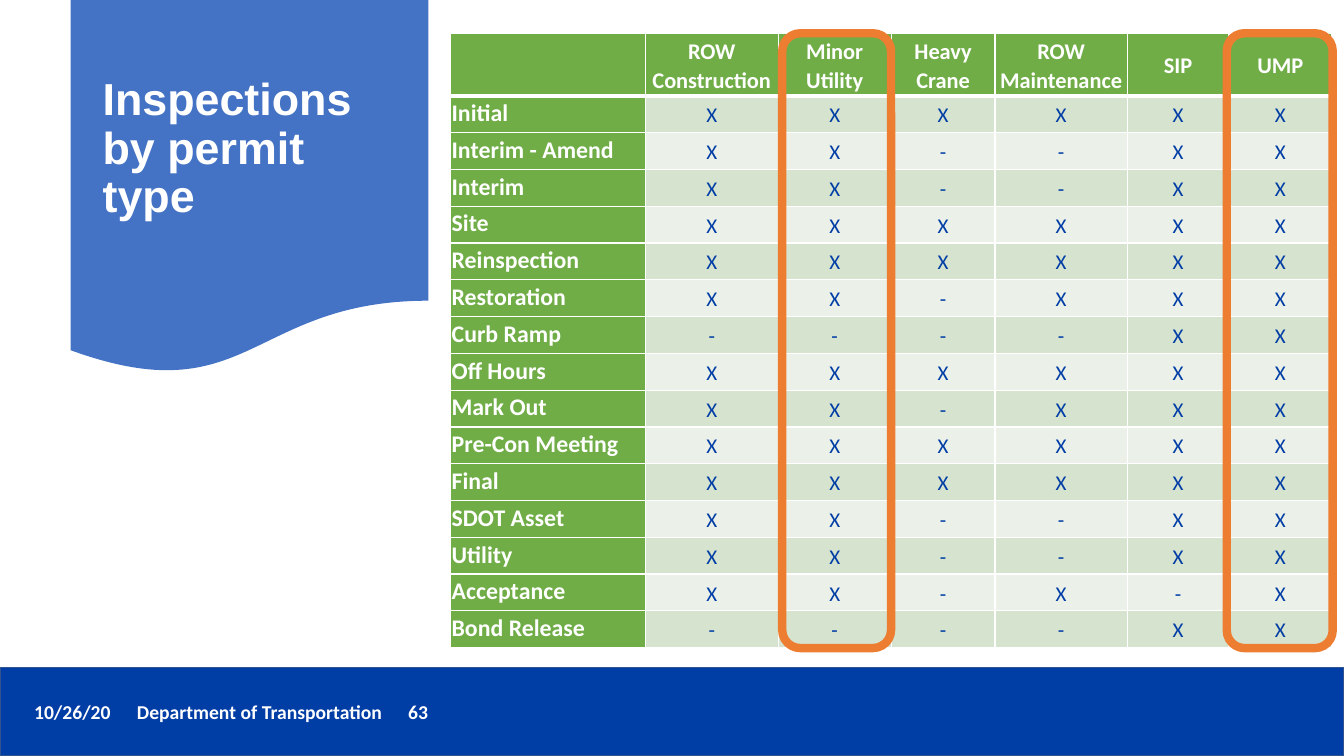
from dataclasses import dataclass

from pptx import Presentation
from pptx import util as u
from pptx.dml.color import RGBColor
from pptx.enum import shapes, text
from pptx.oxml import parse_xml
from pptx.oxml.ns import nsdecls

WHITE = RGBColor(0xFF, 0xFF, 0xFF)
NAVY = RGBColor(0x00, 0x3D, 0xA5)
EDGE = RGBColor(0x31, 0x53, 0x8F)
BLUE = RGBColor(0x44, 0x72, 0xC4)
GREEN = RGBColor(0x70, 0xAD, 0x47)
ORANGE = RGBColor(0xED, 0x7D, 0x31)
BANDS = (RGBColor(0xD5, 0xE3, 0xCF), RGBColor(0xEB, 0xF1, 0xE9))

WIDE, HIGH = u.Inches(13.33), u.Inches(7.5)


@dataclass
class Box:
    """A place on the slide, in percent of its width and height."""
    x: float
    y: float
    w: float
    h: float

    def rect(self) -> tuple[int, ...]:
        return across(self.x), down(self.y), across(self.w), down(self.h)


@dataclass
class Block:
    kind: shapes.MSO_SHAPE
    box: Box
    fill: RGBColor | None = None
    line: RGBColor | None = None
    width: float = 1


KIND = shapes.MSO_SHAPE
BLOCKS = [
    Block(KIND.RECTANGLE, Box(0, 88.27, 100, 11.73), NAVY, EDGE),
    Block(KIND.FLOWCHART_DOCUMENT, Box(5.25, 0, 26.63, 49.6), BLUE),
]
FRAMES = [
    Block(KIND.FLOWCHART_ALTERNATE_PROCESS, Box(x, 4.4, w, 81.33), None, ORANGE, 6)
    for x, w in ((58.2, 8.1), (91.28, 7.88))
]
GRID = Box(33.53, 4.4, 65.57, 81.33)
COLS = (14.48, 9.9, 8.4, 7.73, 9.83, 7.58, 7.65)
HEAD_ROW, BODY_ROW = 8.28, 4.87
HEADS = ("", "ROW Construction", "Minor Utility", "Heavy Crane",
         "ROW Maintenance", "SIP", "UMP")
MARKS = {
    "Initial": "XXXXXX",
    "Interim - Amend": "XX--XX",
    "Interim": "XX--XX",
    "Site": "XXXXXX",
    "Reinspection": "XXXXXX",
    "Restoration": "XX-XXX",
    "Curb Ramp": "----XX",
    "Off Hours": "XXXXXX",
    "Mark Out": "XX-XXX",
    "Pre-Con Meeting": "XXXXXX",
    "Final": "XXXXXX",
    "SDOT Asset": "XX--XX",
    "Utility": "XX--XX",
    "Acceptance": "XX-X-X",
    "Bond Release": "----XX",
}


def across(share: float) -> int:
    return round(WIDE * share / 100)


def down(share: float) -> int:
    return round(HIGH * share / 100)


def write(frame, words: str, *, size: float, font: str = "Calibri",
          color: RGBColor = WHITE, bold: bool = True, space: float = 1,
          align=text.PP_ALIGN.LEFT):
    para = frame.paragraphs[0]
    para.alignment, para.line_spacing = align, space
    run = para.add_run()
    run.text = words
    run.font.name, run.font.size, run.font.bold = font, u.Pt(size), bold
    run.font.color.rgb = color
    return para


def label(slide, box: Box, words: str, **form):
    frame = slide.shapes.add_textbox(*box.rect()).text_frame
    frame.word_wrap = True
    frame.vertical_anchor = text.MSO_ANCHOR.MIDDLE
    return write(frame, words, **form)


def draw(slide, block: Block) -> None:
    shape = slide.shapes.add_shape(block.kind, *block.box.rect())
    shape.shadow.inherit = False
    if block.fill is None:
        shape.fill.background()
    else:
        shape.fill.solid()
        shape.fill.fore_color.rgb = block.fill
    if block.line is None:
        shape.line.fill.background()
    else:
        shape.line.color.rgb = block.line
        shape.line.width = u.Pt(block.width)


def tabs(para, *shares: float) -> None:
    """Set left tab stops, in percent of the slide's width."""
    stops = "".join(f'<a:tab pos="{across(s)}" algn="l"/>' for s in shares)
    para._p.get_or_add_pPr().append(
        parse_xml(f'<a:tabLst {nsdecls("a")}>{stops}</a:tabLst>'))


def edge(cell, top: float = 1, base: float = 1) -> None:
    """Draw the cell's white borders; widths in points."""
    props = cell._tc.get_or_add_tcPr()
    sides = (("lnL", 1), ("lnR", 1), ("lnT", top), ("lnB", base))
    for spot, (side, width) in enumerate(sides):
        props.insert(spot, parse_xml(
            f'<a:{side} {nsdecls("a")} w="{u.Pt(width)}"><a:solidFill>'
            f'<a:srgbClr val="{WHITE}"/></a:solidFill></a:{side}>'))


def fill(cell, row: int, col: int, words: str) -> None:
    """Format one cell as a heading, a row name or a mark."""
    mark = row > 0 and col > 0
    cell.fill.solid()
    cell.fill.fore_color.rgb = BANDS[(row - 1) % 2] if mark else GREEN
    edge(cell, top=3 if row == 1 else 1, base=3 if row == 0 else 1)
    cell.margin_left = cell.margin_right = cell.margin_top = u.Inches(0.01)
    cell.margin_bottom = 0
    named = row > 0 and col == 0
    cell.vertical_anchor = text.MSO_ANCHOR.TOP if named else text.MSO_ANCHOR.MIDDLE
    if words:
        write(cell.text_frame, words, space=1.07, bold=not mark,
              size=15 if mark else 17 if named else 16,
              color=NAVY if mark else WHITE,
              align=text.PP_ALIGN.LEFT if named else text.PP_ALIGN.CENTER)


def chart(slide) -> None:
    """Lay out the table of inspections against permit types."""
    lines = [HEADS] + [(name, *marks) for name, marks in MARKS.items()]
    table = slide.shapes.add_table(len(lines), len(COLS), *GRID.rect()).table
    for col, share in enumerate(COLS):
        table.columns[col].width = across(share)
    for row, line in enumerate(lines):
        table.rows[row].height = down(BODY_ROW if row else HEAD_ROW)
        for col, words in enumerate(line):
            fill(table.cell(row, col), row, col, words)


def main() -> None:
    deck = Presentation()
    deck.slide_width, deck.slide_height = WIDE, HIGH
    slide = deck.slides.add_slide(deck.slide_layouts[6])
    for block in BLOCKS:
        draw(slide, block)
    foot = label(slide, Box(1.8, 91.87, 75.47, 4.53),
                 "10/26/20\tDepartment of Transportation\t63", size=14)
    tabs(foot, 7.65, 27.83)
    label(slide, Box(6.9, 2.53, 23.33, 34.53), "Inspections by permit type",
          size=32, font="Arial", space=0.9)
    chart(slide)
    for frame in FRAMES:
        draw(slide, frame)
    deck.save("out.pptx")


if __name__ == "__main__":
    main()
